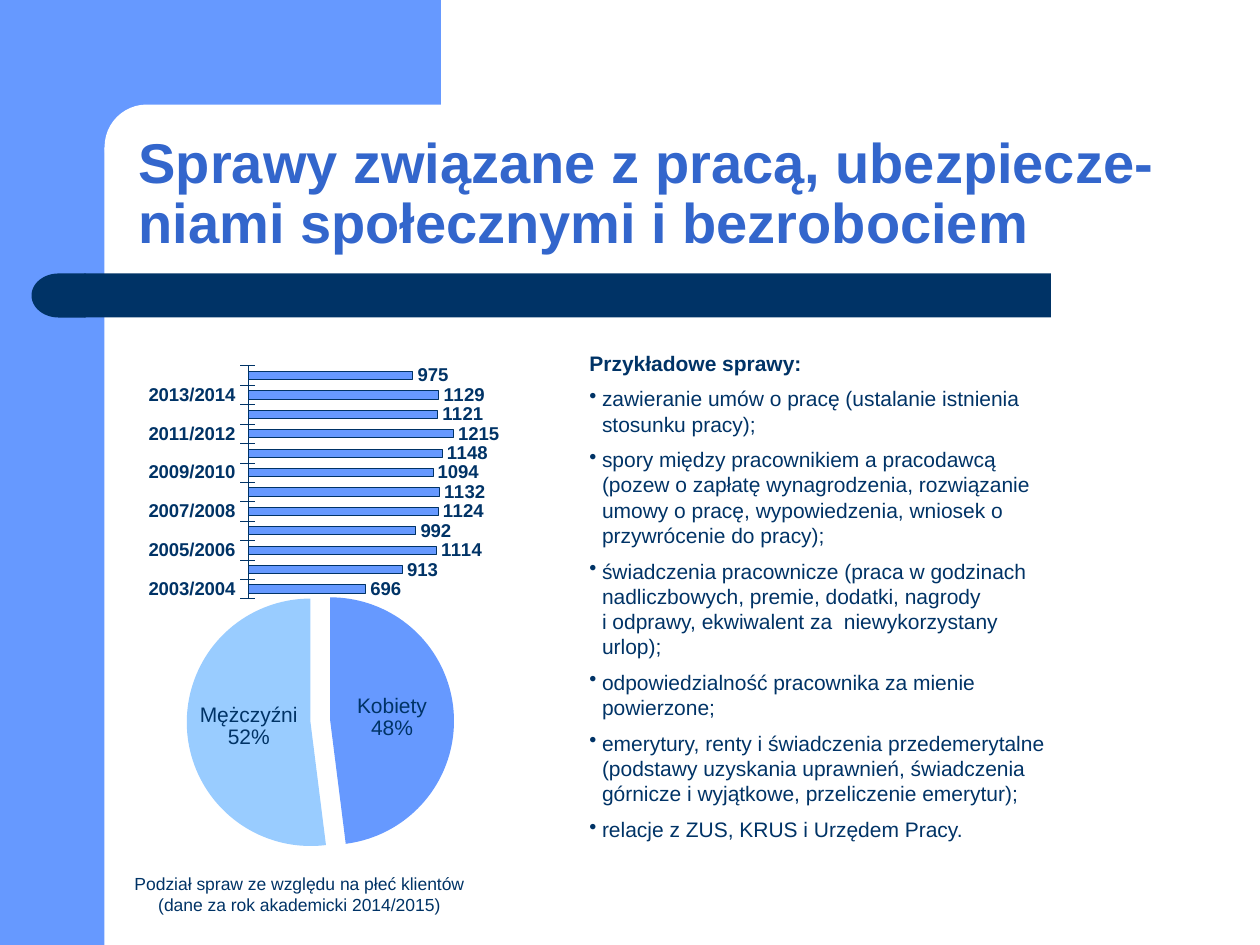
from lxml import etree
from pptx import Presentation
from pptx.chart.data import CategoryChartData
from pptx.dml.color import RGBColor
from pptx.enum.chart import (XL_CHART_TYPE as CHART, XL_LABEL_POSITION as LABEL,
                             XL_TICK_MARK as TICK)
from pptx.enum.shapes import MSO_SHAPE as SHAPE
from pptx.enum.text import MSO_ANCHOR as ANCHOR, MSO_AUTO_SIZE as AUTO, PP_ALIGN as ALIGN
from pptx.oxml import parse_xml
from pptx.oxml.ns import nsdecls, qn
from pptx.util import Emu, Pt

BLUE = RGBColor(0x66, 0x99, 0xFF)
LIGHT = RGBColor(0x99, 0xCC, 0xFF)
NAVY = RGBColor(0x00, 0x33, 0x66)
TITLE = RGBColor(0x33, 0x66, 0xCC)
WHITE = RGBColor(0xFF, 0xFF, 0xFF)

CASES = [
    "zawieranie umów o pracę (ustalanie istnienia stosunku pracy);",
    "spory między pracownikiem a pracodawcą (pozew o zapłatę wynagrodzenia, "
    "rozwiązanie umowy o pracę, wypowiedzenia, wniosek o przywrócenie do pracy);",
    "świadczenia pracownicze (praca w godzinach nadliczbowych, premie, dodatki, "
    "nagrody \vi odprawy, ekwiwalent za  niewykorzystany urlop);",
    "odpowiedzialność pracownika za mienie powierzone;",
    "emerytury, renty i świadczenia przedemerytalne (podstawy uzyskania uprawnień, "
    "świadczenia górnicze i wyjątkowe, przeliczenie emerytur);",
    "relacje z ZUS, KRUS i Urzędem Pracy.",
]
YEARLY = [696, 913, 1114, 992, 1124, 1132, 1094, 1148, 1215, 1121, 1129, 975]
FIRST_YEAR = 2003
GENDERS = {"Kobiety": 48, "Mężczyźni": 52}


def px(length):
    """100 px to the inch."""
    return Emu(length * 9144)


def box_emu(box):
    return [px(length) for length in box]


def style(font, size, color=NAVY, bold=False):
    values = {"name": "Arial", "size": Pt(size), "bold": bold}
    for key, value in values.items():
        setattr(font, key, value)
    font.color.rgb = color


def block(slide, kind, box, color, corner=None):
    shape = slide.shapes.add_shape(kind, *box_emu(box))
    shape.shadow.inherit = False
    shape.fill.solid()
    shape.fill.fore_color.rgb = color
    shape.line.fill.background()
    if corner is not None:
        shape.adjustments[0] = corner
    return shape


def add_frame(slide, box):
    """Blue corner with a rounded white cut-out."""
    left, top, width, height = box
    side, band = 83, 117
    block(slide, SHAPE.RECTANGLE, (left, top, side, height), BLUE)
    block(slide, SHAPE.RECTANGLE, (left + 75, top, 275, band), BLUE)
    block(slide, SHAPE.ROUNDED_RECTANGLE, (left + side, top + 83, 558, 67), WHITE, 0.5)


def add_divider(slide, box):
    left, top, width, height = box
    cap = 43
    block(slide, SHAPE.RECTANGLE, (left + cap - 1, top, width - cap + 1, height), NAVY)
    block(slide, SHAPE.FLOWCHART_DELAY, (left, top, cap, height), NAVY).rotation = 180


def add_title(slide, box):
    title = slide.shapes.title
    title.left, title.top, title.width, title.height = box_emu(box)
    frame = title.text_frame
    frame.text = "Sprawy związane z pracą, ubezpiecze-niami społecznymi i bezrobociem"
    frame.vertical_anchor = ANCHOR.BOTTOM
    frame.word_wrap = True
    frame.auto_size = AUTO.NONE
    heading = frame.paragraphs[0]
    heading.alignment = ALIGN.LEFT
    heading.line_spacing = 0.9
    style(heading.runs[0].font, 32, TITLE, True)
    slide.shapes._spTree.append(title.element)  # in front of the frame


def text_box(slide, box):
    frame = slide.shapes.add_textbox(*box_emu(box)).text_frame
    frame.word_wrap = True
    frame.auto_size = AUTO.SHAPE_TO_FIT_TEXT
    return frame


def write(paragraph, text, size, bold=False):
    paragraph.text = text
    paragraph.space_before = Pt(size / 2)
    for run in paragraph.runs:
        style(run.font, size, bold=bold)


def add_cases(slide, box):
    frame = text_box(slide, box)
    write(frame.paragraphs[0], "Przykładowe sprawy:", 12, True)
    for case in CASES:
        item = frame.add_paragraph()
        write(item, case, 12)
        props = item._p.get_or_add_pPr()
        props.set("marL", str(px(10)))
        props.set("indent", str(-px(10)))
        etree.SubElement(props, qn("a:buChar")).set("char", "•")


def add_caption(slide, box):
    caption = text_box(slide, box).paragraphs[0]
    write(caption, "Podział spraw ze względu na płeć klientów "
                   "(dane za rok akademicki 2014/2015)", 10)
    caption.alignment = ALIGN.CENTER


def add_chart(slide, kind, box, categories, values, layout):
    data = CategoryChartData()
    data.categories = categories
    data.add_series("Sprawy", values)
    chart = slide.shapes.add_chart(kind, *box_emu(box), data).chart
    chart.has_legend = chart.has_title = False
    style(chart.font, 12)
    # Fixed inner plot area
    area = chart._chartSpace.find(".//" + qn("c:plotArea"))
    for old in area.findall(qn("c:layout")):
        area.remove(old)
    sizes = "".join(f'<c:{key} val="{value}"/>' for key, value in zip("xywh", layout))
    area.insert(0, parse_xml(
        f'<c:layout {nsdecls("c")}><c:manualLayout><c:layoutTarget val="inner"/>'
        f'<c:xMode val="edge"/><c:yMode val="edge"/>{sizes}</c:manualLayout></c:layout>'))
    return chart


def add_yearly_bars(slide, box):
    years = [f"{year}/{year + 1}" for year in range(FIRST_YEAR, FIRST_YEAR + len(YEARLY))]
    chart = add_chart(slide, CHART.BAR_CLUSTERED, box, years, YEARLY,
                      (0.28, 0.08, 0.58, 0.86))
    axis = chart.category_axis
    axis.major_tick_mark = TICK.CROSS
    axis.has_major_gridlines = False
    axis.format.line.color.rgb = NAVY
    axis.format.line.width = Pt(0.15)
    style(axis.tick_labels.font, 10.6, bold=True)
    scale = chart.value_axis
    scale.minimum_scale, scale.maximum_scale = 0, 1400
    scale.has_major_gridlines = False
    scale.visible = False
    plot = chart.plots[0]
    plot.gap_width = 140
    plot.vary_by_categories = False
    bars = plot.series[0].format
    bars.fill.solid()
    bars.fill.fore_color.rgb = BLUE
    bars.line.color.rgb = NAVY
    bars.line.width = Pt(0.25)
    plot.has_data_labels = True
    labels = plot.data_labels
    labels.show_value = True
    labels.position = LABEL.OUTSIDE_END
    style(labels.font, 10.6, bold=True)


def add_gender_pie(slide, box):
    chart = add_chart(slide, CHART.PIE, box, list(GENDERS), list(GENDERS.values()),
                      (0.28, 0.05, 0.49, 0.89))
    plot = chart.plots[0]
    series = plot.series[0]
    for index, color in enumerate((BLUE, LIGHT)):
        fill = series.points[index].format.fill
        fill.solid()
        fill.fore_color.rgb = color
    series._element.find(qn("c:tx")).addnext(
        parse_xml(f'<c:explosion {nsdecls("c")} val="8"/>'))
    plot.has_data_labels = True
    labels = plot.data_labels
    labels.show_value = False
    labels.show_category_name = labels.show_percentage = True
    labels.number_format = "0%"
    labels.number_format_is_linked = False
    labels.position = LABEL.CENTER
    style(labels.font, 12)
    labels._element.find(qn("c:showBubbleSize")).addnext(
        parse_xml(f'<c:separator {nsdecls("c")}>\n</c:separator>'))


def main():
    deck = Presentation()
    deck.slide_width, deck.slide_height = px(1000), px(750)
    slide = deck.slides.add_slide(deck.slide_layouts[5])
    add_frame(slide, (0, 0, 1000, 750))
    add_divider(slide, (25, 217, 809, 35))
    add_title(slide, (100, 83, 875, 125))
    add_cases(slide, (458, 273, 396, 394))
    add_yearly_bars(slide, (106, 273, 324, 215))
    add_caption(slide, (86, 688, 303, 43))
    add_gender_pie(slide, (27, 454, 433, 240))
    deck.save("out.pptx")


if __name__ == "__main__":
    main()
